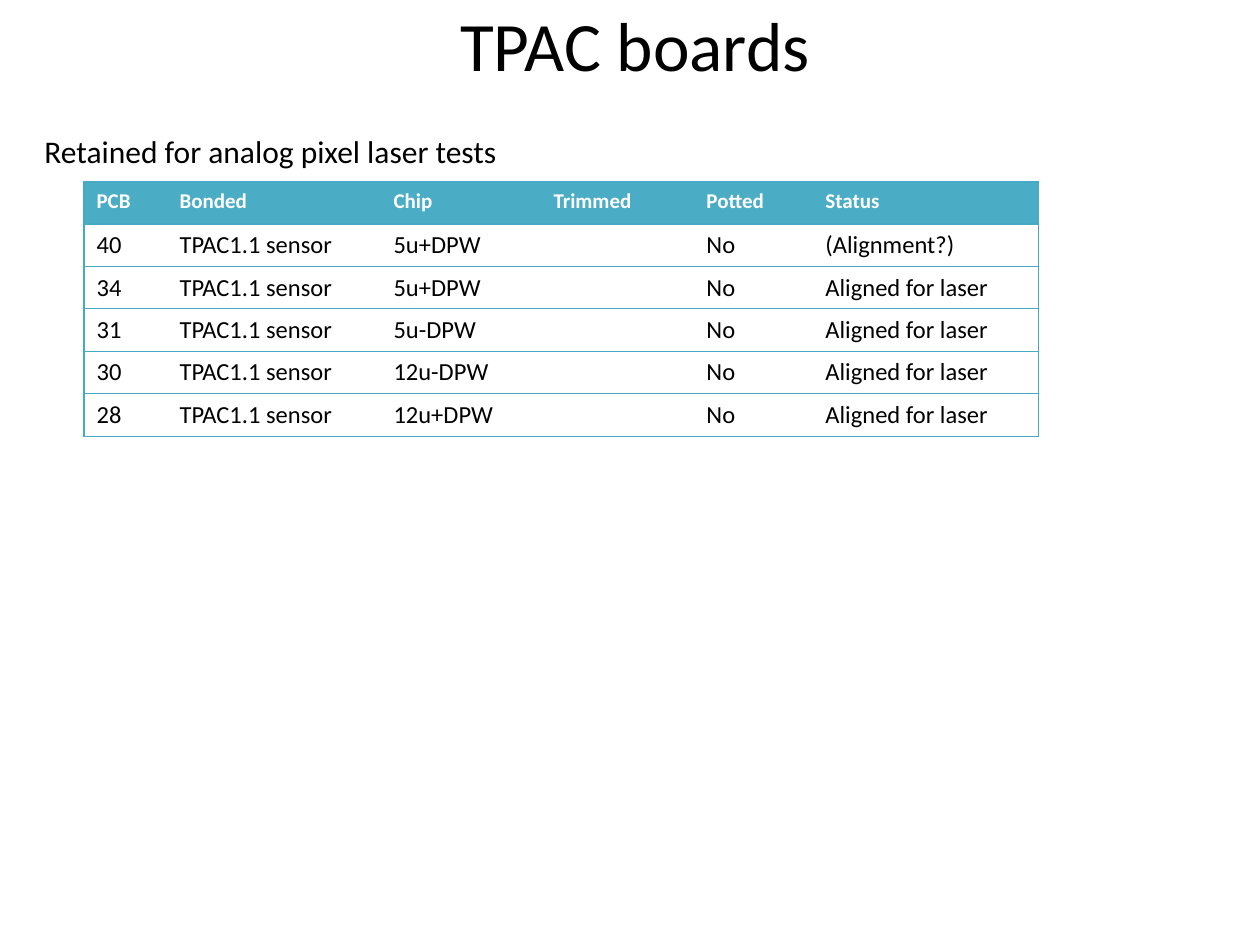
from lxml import etree
from pptx import Presentation
from pptx.dml.color import RGBColor
from pptx.enum.text import MSO_ANCHOR, PP_ALIGN
from pptx.oxml.ns import qn
from pptx.util import Emu, Pt

CENTER = PP_ALIGN.CENTER
MIDDLE = MSO_ANCHOR.MIDDLE
TITLE_ONLY = 5
PX_PER_INCH = 126
FONT = "Calibri"
COLORS = {"text": "000000", "header": "4BACC6", "header_text": "FFFFFF",
          "body": "FFFFFF", "border": "46AAC5"}

COLUMN_WIDTHS = [83, 214, 160, 153, 119, 226]
ROW_HEIGHT = 42
HEADINGS = ["PCB", "Bonded", "Chip", "Trimmed", "Potted", "Status"]
BOARDS = [
    ("40", "5u+DPW", "(Alignment?)"),
    ("34", "5u+DPW", "Aligned for laser"),
    ("31", "5u-DPW", "Aligned for laser"),
    ("30", "12u-DPW", "Aligned for laser"),
    ("28", "12u+DPW", "Aligned for laser"),
]


def px(length):
    return Emu(round(length * 914400 / PX_PER_INCH))


def rgb(name):
    return RGBColor.from_string(COLORS[name])


def format_text(paragraph, size, color, bold=False):
    for run in paragraph.runs:
        run.font.name = FONT
        run.font.size = Pt(size)
        run.font.bold = bold
        run.font.color.rgb = rgb(color)
    if not paragraph.runs:
        # Keeps an empty cell from growing to the default text size
        etree.SubElement(paragraph._p, qn("a:endParaRPr"), sz=str(size * 100))


def set_border(cell, side, visible):
    line = etree.SubElement(cell._tc.get_or_add_tcPr(), qn(f"a:ln{side}"),
                            w=str(Pt(0.75)))
    if visible:
        fill = etree.SubElement(line, qn("a:solidFill"))
        etree.SubElement(fill, qn("a:srgbClr"), val=COLORS["border"])
    else:
        etree.SubElement(line, qn("a:noFill"))


def add_title(slide, text):
    title = slide.shapes.title
    title.left, title.top, title.width, title.height = px(63), px(0), px(1144), px(88)
    title.text_frame.text = text
    title.text_frame.vertical_anchor = MIDDLE
    paragraph = title.text_frame.paragraphs[0]
    paragraph.alignment = CENTER
    format_text(paragraph, 39.6, "text")


def add_caption(slide, text):
    caption = slide.shapes.add_textbox(px(32), px(126), px(483), px(50))
    caption.text_frame.word_wrap = False
    caption.text_frame.text = text
    format_text(caption.text_frame.paragraphs[0], 18, "text")


def add_board_table(slide, rows):
    frame = slide.shapes.add_table(len(rows), len(HEADINGS), px(84), px(182),
                                   px(sum(COLUMN_WIDTHS)), px(ROW_HEIGHT * len(rows)))
    table = frame.table
    table.horz_banding = False
    for column, width in zip(table.columns, COLUMN_WIDTHS):
        column.width = px(width)

    last_column = len(HEADINGS) - 1
    for r, values in enumerate(rows):
        table.rows[r].height = px(ROW_HEIGHT)
        header = r == 0
        for c, value in enumerate(values):
            cell = table.cell(r, c)
            cell.text_frame.text = value
            format_text(cell.text_frame.paragraphs[0], 12 if header else 14,
                        "header_text" if header else "text", bold=header)
            # Outer frame and row rules, without inner column rules
            for side, visible in (("L", c == 0), ("R", c == last_column),
                                  ("T", True), ("B", True)):
                set_border(cell, side, visible)
            cell.fill.solid()
            cell.fill.fore_color.rgb = rgb("header" if header else "body")


def main():
    presentation = Presentation()
    presentation.slide_width, presentation.slide_height = px(1260), px(945)
    slide = presentation.slides.add_slide(presentation.slide_layouts[TITLE_ONLY])

    add_title(slide, "TPAC boards")
    board_rows = [(pcb, "TPAC1.1 sensor", chip, "", "No", status)
                  for pcb, chip, status in BOARDS]
    add_board_table(slide, [HEADINGS] + board_rows)
    add_caption(slide, "Retained for analog pixel laser tests")
    presentation.save("out.pptx")


if __name__ == "__main__":
    main()
